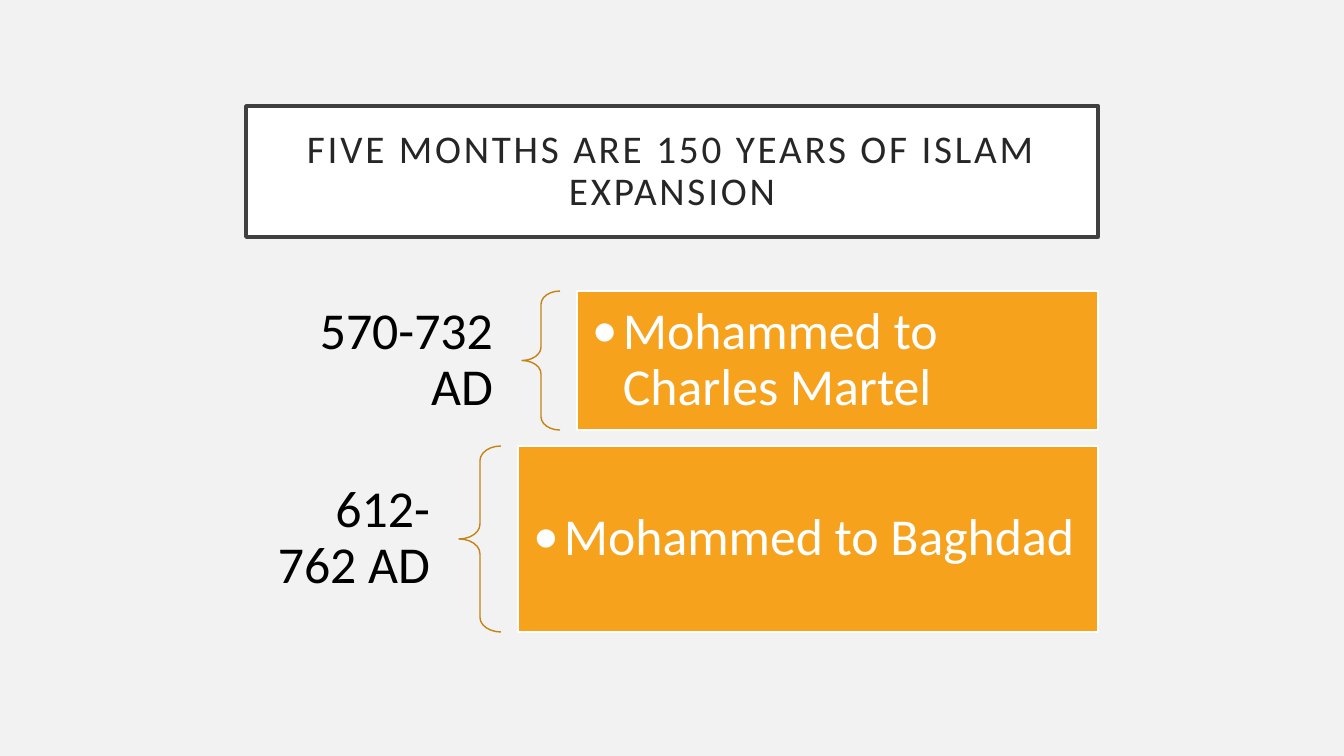
from lxml import etree
from pptx import Presentation, util as u
from pptx.dml.color import RGBColor
from pptx.enum import shapes, text
from pptx.oxml import ns

PX = 914400 / 100.8
FONT = "Calibri"
COLORS = {
    "background": "F2F2F2", "white": "FFFFFF", "title_line": "404040",
    "title_text": "262626", "label": "000000", "brace": "C58217", "block": "F6A21D",
}
ROWS = [
    ("570-732 AD", "Mohammed to Charles Martel", 291, 139, 276, 131, 38),
    ("612-762 AD", "Mohammed to Baghdad", 446, 186, 213, 186, 42),
]


def px(n):
    """Turn pixels into EMU."""
    return u.Emu(round(n * PX))


def rgb(name):
    """Return a named colour."""
    return RGBColor.from_string(COLORS[name])


def style(sp, line, width, fill=None):
    """Set outline and fill, without a shadow."""
    sp.shadow.inherit = False
    sp.line.color.rgb = rgb(line)
    sp.line.width = u.Pt(width)
    if fill:
        sp.fill.solid()
        sp.fill.fore_color.rgb = rgb(fill)
    else:
        sp.fill.background()


def write(sp, words, size, color, align, inset_x, inset_y):
    """Write one middle-anchored paragraph and return it."""
    tf = sp.text_frame
    tf.word_wrap = True
    tf.auto_size = text.MSO_AUTO_SIZE.NONE
    tf.vertical_anchor = text.MSO_ANCHOR.MIDDLE
    tf.margin_left = tf.margin_right = px(inset_x)
    tf.margin_top = tf.margin_bottom = px(inset_y)
    p = tf.paragraphs[0]
    p.alignment = align
    p.line_spacing = 0.9
    p.space_before = u.Pt(0)
    r = p.add_run()
    r.text = words
    r.font.name = FONT
    r.font.size = u.Pt(size)
    r.font.color.rgb = rgb(color)
    return p


def add_bullet(p, indent):
    """Give a paragraph a hanging round bullet."""
    pPr = p._p.get_or_add_pPr()
    pPr.set("marL", str(px(indent)))
    pPr.set("indent", str(-px(indent)))
    etree.SubElement(pPr, ns.qn("a:buFont")).set("typeface", FONT)
    etree.SubElement(pPr, ns.qn("a:buChar")).set("char", "•")


def add_title(s, words, left, top, width, height):
    """Place the framed title."""
    sp = s.shapes.title
    sp.left, sp.top, sp.width, sp.height = map(px, (left, top, width, height))
    style(sp, "title_line", 2.5, "white")
    p = write(sp, words, 28, "title_text", text.PP_ALIGN.CENTER, 20, 20)
    p.runs[0].font._element.set("spc", "200")


def add_row(s, row, left, width):
    """Place a date label, its brace and the event block."""
    date, event, top, height, label_w, label_h, brace_w = row
    label_top = top + (height - label_h) / 2
    label = s.shapes.add_textbox(px(left), px(label_top), px(label_w), px(label_h))
    write(label, date, 37, "label", text.PP_ALIGN.RIGHT, 29, 10)

    brace_left = left + label_w
    brace = s.shapes.add_shape(
        shapes.MSO_SHAPE.LEFT_BRACE, px(brace_left), px(top), px(brace_w), px(height))
    brace.adjustments[0] = 0.35
    brace.adjustments[1] = 0.5
    style(brace, "brace", 1)

    block_left = brace_left + brace_w + 17
    block = s.shapes.add_shape(
        shapes.MSO_SHAPE.RECTANGLE, px(block_left), px(top),
        px(left + width - block_left), px(height))
    style(block, "white", 1, "block")
    p = write(block, event, 37, "white", text.PP_ALIGN.LEFT, 15, 15)
    add_bullet(p, 31)


def main():
    """Build and save the slide."""
    prs = Presentation()
    prs.slide_width, prs.slide_height = px(1344), px(756)
    s = prs.slides.add_slide(prs.slide_layouts[5])
    s.background.fill.solid()
    s.background.fill.fore_color.rgb = rgb("background")
    left, width = 246, 852
    add_title(s, "FIVE MONTHS ARE 150 YEARS OF ISLAM EXPANSION", left, 106, width, 131)
    for row in ROWS:
        add_row(s, row, left, width)
    prs.save("out.pptx")


if __name__ == "__main__":
    main()
